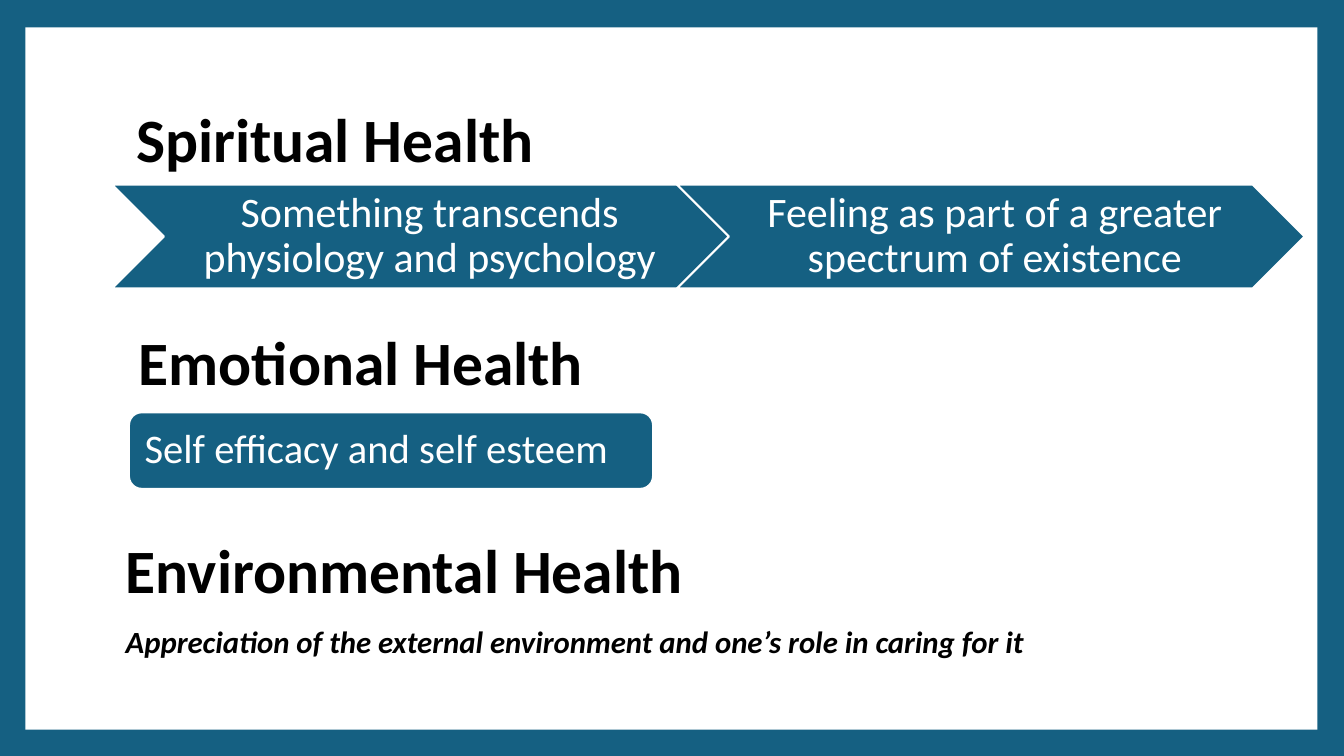
from pptx import Presentation
from pptx.dml.color import RGBColor
from pptx.enum.shapes import MSO_SHAPE
from pptx.enum.text import MSO_ANCHOR, PP_ALIGN
from pptx.util import Cm, Pt

RECT = MSO_SHAPE.RECTANGLE
ROUND = MSO_SHAPE.ROUNDED_RECTANGLE
CHEVRON = MSO_SHAPE.CHEVRON
TOP, MIDDLE = MSO_ANCHOR.TOP, MSO_ANCHOR.MIDDLE
LEFT, CENTER = PP_ALIGN.LEFT, PP_ALIGN.CENTER

BLUE, WHITE, BLACK = "156082", "FFFFFF", "000000"
HEAD = {"size": Pt(44), "bold": True}
NOTE = {"size": Pt(22), "bold": True, "italic": True}
STEP = {"size": Pt(30)}
CARD = {"size": Pt(29)}

STEPS = [
    "Something transcends physiology and psychology",
    "Feeling as part of a greater spectrum of existence",
]


def paint(fill, color):
    fill.solid()
    fill.fore_color.rgb = RGBColor.from_string(color)


def write(frame, lines, color=BLACK, align=LEFT, anchor=MIDDLE,
          inset=(0.25, 0.13, 0.25, 0.13), gap=0):
    """Fill a text frame with (text, font format) lines."""
    frame.word_wrap = True
    frame.vertical_anchor = anchor
    sides = ("left", "top", "right", "bottom")
    for side, size in zip(sides, inset):
        setattr(frame, "margin_" + side, Cm(size))
    for index, (text, style) in enumerate(lines):
        para = frame.add_paragraph() if index else frame.paragraphs[0]
        para.text = text
        para.alignment = align
        para.line_spacing = 0.9
        para.space_before = Pt(gap if index else 0)
        para.font.name = "Calibri"
        para.font.color.rgb = RGBColor.from_string(color)
        for name, value in style.items():
            setattr(para.font, name, value)


def add_block(slide, kind, box, color, edge=None):
    shape = slide.shapes.add_shape(kind, *map(Cm, box))
    shape.shadow.inherit = False
    paint(shape.fill, color)
    if edge:
        paint(shape.line.fill, edge)
        shape.line.width = Pt(1.5)
    else:
        shape.line.fill.background()
    return shape


def add_text(slide, box, lines, **layout):
    frame = slide.shapes.add_textbox(*map(Cm, box)).text_frame
    write(frame, lines, **layout)


def set_title(slide, box, text):
    title = slide.shapes.title
    title.left, title.top, title.width, title.height = map(Cm, box)
    write(title.text_frame, [(text, HEAD)])


def main():
    deck = Presentation()
    deck.slide_width, deck.slide_height = Cm(33.87), Cm(19.05)
    slide = deck.slides.add_slide(deck.slide_layouts[5])

    # Blue frame around a white panel
    paint(slide.background.fill, BLUE)
    panel = add_block(slide, RECT, (0.64, 0.69, 32.56, 17.7), WHITE)
    tree = slide.shapes.title.element.getparent()
    tree.remove(panel.element)
    tree.insert(2, panel.element)

    # Spiritual health: a row of chevrons
    set_title(slide, (3.18, 1.7, 27.43, 3.76), "Spiritual Health")
    for index, text in enumerate(STEPS):
        box = (2.82 + 14.24 * index, 4.65, 15.82, 2.62)
        step = add_block(slide, CHEVRON, box, BLUE, WHITE)
        write(step.text_frame, [(text, STEP)], WHITE, CENTER,
              inset=(0.32, 0.11, 0.11, 0.11))

    # Emotional health: one card
    add_text(slide, (3.25, 8.13, 13.21, 2.16), [("Emotional Health", HEAD)])
    card = add_block(slide, ROUND, (3.25, 10.39, 13.21, 1.93), BLUE, WHITE)
    write(card.text_frame, [("Self efficacy and self esteem", CARD)], WHITE,
          inset=(0.3, 0.3, 0.3, 0.3))

    # Environmental health: heading and note
    add_text(slide, (2.79, 13.49, 29.31, 4.4), [
        ("Environmental Health", HEAD),
        ("Appreciation of the external environment and one’s role in "
         "caring for it", NOTE),
    ], anchor=TOP, inset=(0.38, 0.13, 0.25, 0.13), gap=14)

    deck.save("out.pptx")


if __name__ == "__main__":
    main()
